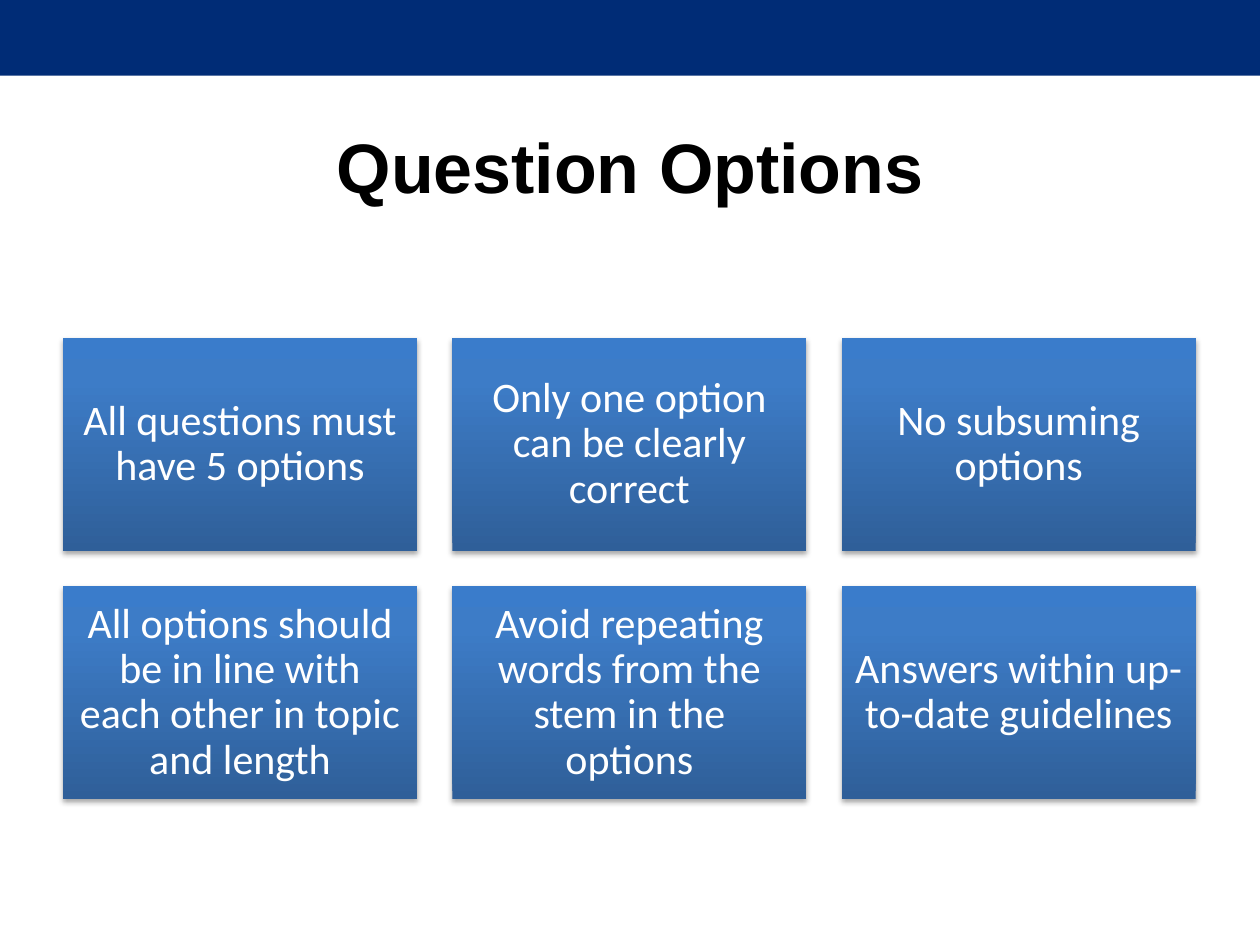
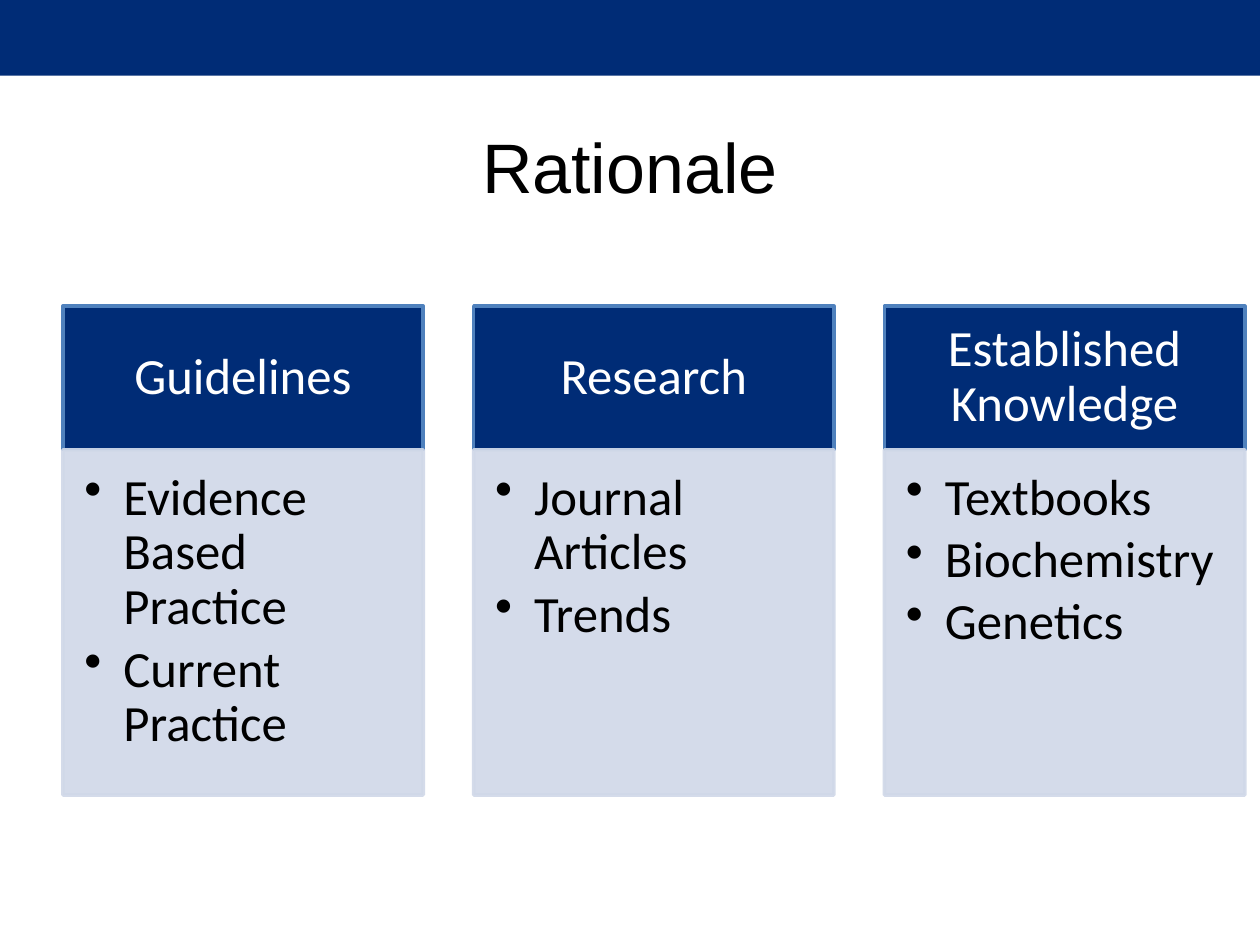
"""Build the question options and rationale slides."""
from dataclasses import dataclass

from lxml import etree
from pptx import Presentation
from pptx.dml.color import RGBColor
from pptx.enum.shapes import MSO_SHAPE
from pptx.enum.text import MSO_ANCHOR, PP_ALIGN
from pptx.oxml.ns import qn
from pptx.util import Inches, Pt

RECTANGLE = MSO_SHAPE.RECTANGLE
MIDDLE, TOP = MSO_ANCHOR.MIDDLE, MSO_ANCHOR.TOP
CENTER, LEFT = PP_ALIGN.CENTER, PP_ALIGN.LEFT

WIDTH, HEIGHT = 10, 7.5
MARGIN = 0.05 * WIDTH
NAVY, BLUE, PALE = "002C76", "4F81BD", "D0D8E8"
BLACK, WHITE = "000000", "FFFFFF"
CARD_STOPS = ((0, "2F5F99"), (80, "3D7CC7"), (100, "3A7CCB"))
HEADING_FONT, BODY_FONT = "Arial", "Calibri"
BULLET_INDENT = 0.31


@dataclass(frozen=True)
class Box:
    """A rectangular area in inches."""
    left: float
    top: float
    width: float
    height: float


@dataclass(frozen=True)
class Grid:
    """Equal cells with equal gaps, counted from the top left."""
    first: Box
    gap: float

    def cell(self, column: int, row: int = 0) -> Box:
        """Return the area of one cell."""
        first = self.first
        return Box(first.left + column * (first.width + self.gap),
                   first.top + row * (first.height + self.gap),
                   first.width, first.height)


@dataclass(frozen=True)
class Source:
    """A kind of evidence and its examples."""
    heading: str
    examples: tuple[str, ...]


BAND = Box(0, 0, WIDTH, 0.08 * HEIGHT)
TITLE = Box(MARGIN, 0.69, WIDTH - 2 * MARGIN, 1.25)
RULE_GRID = Grid(Box(MARGIN, 2.68, 2.81, 1.69), 0.28)
HEADING_GRID = Grid(Box(MARGIN, 2.43, 2.86, 1.14), 0.4)
EXAMPLE_GRID = Grid(Box(MARGIN, 3.57, 2.86, 2.74), 0.4)

OPTION_RULES = (
    "All questions must have 5 options",
    "Only one option can be clearly correct",
    "No subsuming options",
    "All options should be in line with each other in topic and length",
    "Avoid repeating words from the stem in the options",
    "Answers within up-to-date guidelines",
)
SOURCES = (
    Source("Guidelines", ("Evidence Based Practice", "Current Practice")),
    Source("Research", ("Journal Articles", "Trends")),
    Source("Established Knowledge", ("Textbooks", "Biochemistry", "Genetics")),
)


def rgb(value: str) -> RGBColor:
    """Turn a hex string into a colour."""
    return RGBColor.from_string(value)


def add_child(parent, tag: str, **attributes):
    """Append a drawing element with the given attributes."""
    child = etree.SubElement(parent, qn(f"a:{tag}"))
    for key, value in attributes.items():
        child.set(key, str(value))
    return child


def set_alpha(element, percent: int) -> None:
    """Make every colour under an element partly transparent."""
    for color in element.iter(qn("a:srgbClr")):
        add_child(color, "alpha", val=percent * 1000)


def place(box: Box) -> tuple:
    """Convert an area to slide units."""
    return tuple(Inches(n) for n in (box.left, box.top, box.width, box.height))


def add_panel(slide, box: Box, fill: str = "", line: str = "", alpha: int = 100):
    """Draw a rectangle, without fill or outline unless given."""
    panel = slide.shapes.add_shape(RECTANGLE, *place(box))
    panel.shadow.inherit = False
    if fill:
        panel.fill.solid()
        panel.fill.fore_color.rgb = rgb(fill)
    if line:
        panel.line.color.rgb = rgb(line)
        panel.line.width = Pt(2)
    else:
        panel.line.fill.background()
    if alpha < 100:
        set_alpha(panel._element.spPr, alpha)
    return panel


def add_glossy_panel(slide, box: Box):
    """Draw a rectangle with a vertical gradient and a soft shadow."""
    panel = add_panel(slide, box)
    panel.fill.gradient()
    panel.fill.gradient_angle = 90
    properties = panel._element.spPr
    stops = properties.find(".//" + qn("a:gsLst"))
    for stop in list(stops):
        stops.remove(stop)
    for position, color in CARD_STOPS:
        add_child(add_child(stops, "gs", pos=position * 1000), "srgbClr", val=color)
    shadow = add_child(properties.find(qn("a:effectLst")), "outerShdw",
                       blurRad=Pt(3.1), dist=Pt(1.8), dir=5400000, rotWithShape=0)
    add_child(shadow, "srgbClr", val=BLACK)
    set_alpha(shadow, 35)
    return panel


def write(shape, *texts: str, size: float, color: str = WHITE, font: str = BODY_FONT,
          bold: bool = False, align=CENTER, anchor=MIDDLE, spacing: float = 0.9,
          insets: tuple = (0.1, 0.05, 0.1, 0.05), bullets: bool = False) -> None:
    """Fill a shape with formatted paragraphs."""
    frame = shape.text_frame
    frame.word_wrap = True
    frame.vertical_anchor = anchor
    (frame.margin_left, frame.margin_top,
     frame.margin_right, frame.margin_bottom) = map(Inches, insets)
    for index, text in enumerate(texts):
        paragraph = frame.add_paragraph() if index else frame.paragraphs[0]
        paragraph.text = text
        paragraph.alignment = align
        paragraph.line_spacing = spacing
        if bullets:
            paragraph.space_after = Pt(0.15 * size)
            properties = paragraph._p.get_or_add_pPr()
            properties.set("marL", str(Inches(BULLET_INDENT)))
            properties.set("indent", str(-Inches(BULLET_INDENT)))
            add_child(properties, "buChar", char="•")
        paragraph.font.size = Pt(size)
        paragraph.font.name = font
        paragraph.font.bold = bold
        paragraph.font.color.rgb = rgb(color)


def add_titled_slide(deck, title: str, bold: bool = False):
    """Add a slide with the shared band and title."""
    slide = deck.slides.add_slide(deck.slide_layouts[6])
    add_panel(slide, BAND, NAVY)
    write(slide.shapes.add_textbox(*place(TITLE)), title, size=40, color=BLACK,
          font=HEADING_FONT, bold=bold, spacing=1.0)
    return slide


def add_options_slide(deck) -> None:
    """Show the rules for answer options as cards."""
    slide = add_titled_slide(deck, "Question Options", bold=True)
    for index, rule in enumerate(OPTION_RULES):
        row, column = divmod(index, 3)
        card = add_glossy_panel(slide, RULE_GRID.cell(column, row))
        write(card, rule, size=24, insets=(0.1,) * 4)


def add_rationale_slide(deck) -> None:
    """Show the sources of a rationale as headed lists."""
    slide = add_titled_slide(deck, "Rationale")
    for column, source in enumerate(SOURCES):
        heading = add_panel(slide, HEADING_GRID.cell(column), NAVY, BLUE)
        write(heading, source.heading, size=29, insets=(0.23, 0.13, 0.23, 0.13))
        examples = add_panel(slide, EXAMPLE_GRID.cell(column), PALE, PALE, alpha=90)
        write(examples, *source.examples, size=29, color=BLACK, align=LEFT, anchor=TOP,
              insets=(0.17, 0.17, 0.23, 0.25), bullets=True)


def main() -> None:
    """Build and save the slides."""
    deck = Presentation()
    deck.slide_width, deck.slide_height = Inches(WIDTH), Inches(HEIGHT)
    add_options_slide(deck)
    add_rationale_slide(deck)
    deck.save("out.pptx")


if __name__ == "__main__":
    main()
